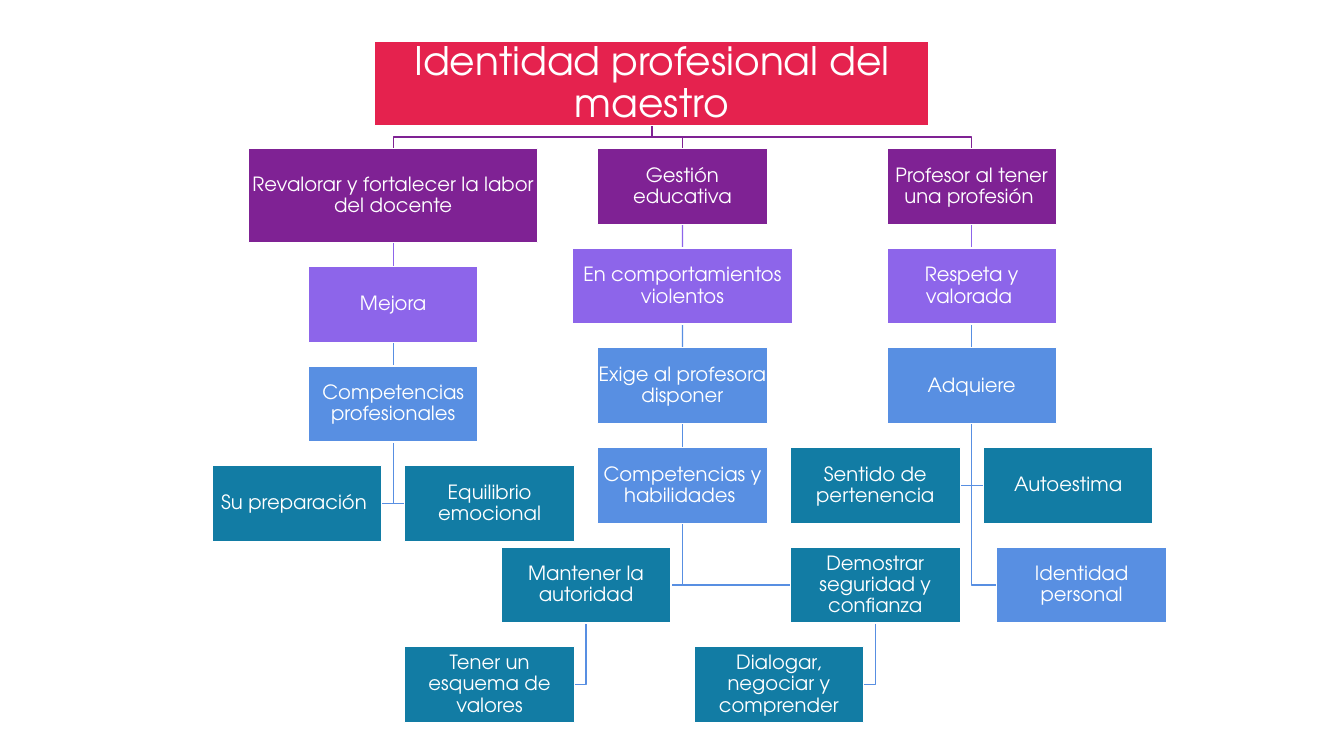
from dataclasses import dataclass
from enum import Enum

from lxml.etree import SubElement
from pptx import Presentation
from pptx.dml.color import RGBColor
from pptx.enum.shapes import MSO_CONNECTOR, MSO_SHAPE
from pptx.enum.text import MSO_ANCHOR, PP_ALIGN
from pptx.oxml.ns import qn
from pptx.util import Cm, Pt

RED, PURPLE, VIOLET = "E5224E", "7F2294", "8D65EA"
BLUE, TEAL, WHITE = "588FE2", "127CA4", "FFFFFF"

# Layout in centimetres: three branches, evenly spaced rows
LEFT, MIDDLE, RIGHT = 9.91, 17.2, 24.49
BOX_W, BOX_H = 4.28, 1.92
FIRST_ROW, ROW_STEP = 3.74, 2.51
SIDE = 2.43          # offset of a box hanging beside its trunk
LEFT_DROP = 0.46     # the left branch sits lower under its taller head

TEXT_FRAME = {
    "word_wrap": True, "vertical_anchor": MSO_ANCHOR.MIDDLE,
    "margin_left": Cm(0.02), "margin_right": Cm(0.02),
    "margin_top": Cm(0.02), "margin_bottom": Cm(0.02),
}
PARAGRAPH = {"alignment": PP_ALIGN.CENTER, "line_spacing": 0.9}


class Link(Enum):
    FORK = "from the title, down to the top of a branch head"
    DOWN = "straight to the box below"
    HANG = "down, then sideways to the near side of a box"


@dataclass
class Node:
    text: str
    x: float          # centre
    top: float
    fill: str
    parent: str = ""
    link: Link = Link.DOWN
    link_color: str = BLUE
    w: float = BOX_W
    h: float = BOX_H
    size: int = 14

    @property
    def bottom(self) -> float:
        return self.top + self.h


def row(n: int, drop: float = 0) -> float:
    return FIRST_ROW + n * ROW_STEP + drop


def head(text: str, x: float, **size: float) -> Node:
    return Node(text, x, row(0), PURPLE, TITLE, Link.FORK, PURPLE, **size)


def second(text: str, x: float, parent: str, drop: float = 0, w: float = BOX_W) -> Node:
    return Node(text, x, row(1, drop), VIOLET, parent, Link.DOWN, VIOLET, w)


def hanging(text: str, x: float, top: float, parent: str, fill: str = TEAL) -> Node:
    return Node(text, x, top, fill, parent, Link.HANG)


TITLE = "Identidad profesional del maestro"
REVALUE = "Revalorar y fortalecer la labor del docente"
SKILLS = "Competencias profesionales"
MANAGEMENT = "Gestión educativa"
BEHAVIOUR = "En comportamientos violentos"
DEMANDS = "Exige al profesora disponer"
ABILITIES = "Competencias y habilidades "
AUTHORITY = "Mantener la autoridad"
CONFIDENCE = "Demostrar seguridad y confianza"
PROFESSION = "Profesor al tener una profesión "
RESPECT = "Respeta y valorada "
ACQUIRES = "Adquiere"

NODES = [
    Node(TITLE, 16.43, 1.05, RED, w=13.97, h=2.11, size=28),
    # Left branch
    head(REVALUE, LEFT, w=7.29, h=BOX_H + LEFT_DROP),
    second("Mejora", LEFT, REVALUE, LEFT_DROP),
    Node(SKILLS, LEFT, row(2, LEFT_DROP), BLUE, "Mejora"),
    hanging("Su preparación ", LEFT - SIDE, row(3, LEFT_DROP), SKILLS),
    hanging("Equilibrio emocional", LEFT + SIDE, row(3, LEFT_DROP), SKILLS),
    # Middle branch
    head(MANAGEMENT, MIDDLE),
    second(BEHAVIOUR, MIDDLE, MANAGEMENT, w=5.56),
    Node(DEMANDS, MIDDLE, row(2), BLUE, BEHAVIOUR),
    Node(ABILITIES, MIDDLE, row(3), BLUE, DEMANDS),
    hanging(AUTHORITY, MIDDLE - SIDE, row(4), ABILITIES),
    hanging("Tener un esquema de valores", MIDDLE - 2 * SIDE, row(5), AUTHORITY),
    hanging(CONFIDENCE, RIGHT - SIDE, row(4), ABILITIES),
    hanging("Dialogar, negociar y comprender", RIGHT - 2 * SIDE, row(5), CONFIDENCE),
    # Right branch
    head(PROFESSION, RIGHT),
    second(RESPECT, RIGHT, PROFESSION),
    Node(ACQUIRES, RIGHT, row(2), BLUE, RESPECT),
    hanging("Identidad personal", RIGHT + 2.77, row(4), ACQUIRES, BLUE),
    hanging("Sentido de pertenencia", RIGHT - SIDE, row(3), ACQUIRES),
    hanging("Autoestima", RIGHT + SIDE, row(3), ACQUIRES),
]


def rgb(color: str) -> RGBColor:
    return RGBColor.from_string(color)


def set_all(target, values: dict) -> None:
    for name, value in values.items():
        setattr(target, name, value)


def set_line(shape, color: str) -> None:
    shape.line.color.rgb = rgb(color)
    shape.line.width = Pt(1)


def add_box(s, node: Node):
    sp = s.shapes.add_shape(MSO_SHAPE.RECTANGLE, Cm(node.x - node.w / 2),
                            Cm(node.top), Cm(node.w), Cm(node.h))
    sp.shadow.inherit = False
    sp.fill.solid()
    sp.fill.fore_color.rgb = rgb(node.fill)
    set_line(sp, WHITE)
    tf = sp.text_frame
    set_all(tf, TEXT_FRAME)
    p = tf.paragraphs[0]
    set_all(p, PARAGRAPH)
    r = p.add_run()
    r.text = node.text
    set_all(r.font, {"name": "TeX Gyre Adventor", "size": Pt(node.size)})
    r.font.color.rgb = rgb(WHITE)
    return sp


def add_straight_link(s, upper, lower, color: str):
    link = s.shapes.add_connector(MSO_CONNECTOR.STRAIGHT, 0, 0, 0, 0)
    link.begin_connect(upper, 2)
    link.end_connect(lower, 0)
    set_line(link, color)
    SubElement(link.element.spPr, qn("a:effectLst"))
    return link


def add_bent_link(s, parent: Node, node: Node):
    if node.link is Link.FORK:
        bend = (parent.bottom + node.top) / 2
        points = [(parent.x, bend), (node.x, bend), (node.x, node.top)]
    else:
        middle = node.top + node.h / 2
        near = node.w / 2 if node.x < parent.x else -node.w / 2
        points = [(parent.x, middle), (node.x + near, middle)]
    builder = s.shapes.build_freeform(Cm(parent.x), Cm(parent.bottom))
    builder.add_line_segments([(Cm(x), Cm(y)) for x, y in points], close=False)
    link = builder.convert_to_shape()
    link.shadow.inherit = False
    link.fill.background()
    set_line(link, node.link_color)
    return link


def main() -> None:
    prs = Presentation()
    prs.slide_width, prs.slide_height = Cm(33.87), Cm(19.05)
    s = prs.slides.add_slide(prs.slide_layouts[6])

    # Boxes
    by_text = {node.text: node for node in NODES}
    boxes = {node.text: add_box(s, node) for node in NODES}

    # Links, sent behind the boxes
    for node in NODES[1:]:
        if node.link is Link.DOWN:
            link = add_straight_link(s, boxes[node.parent], boxes[node.text],
                                     node.link_color)
        else:
            link = add_bent_link(s, by_text[node.parent], node)
        s.shapes.element.insert(2, link.element)

    prs.save("out.pptx")


if __name__ == "__main__":
    main()
